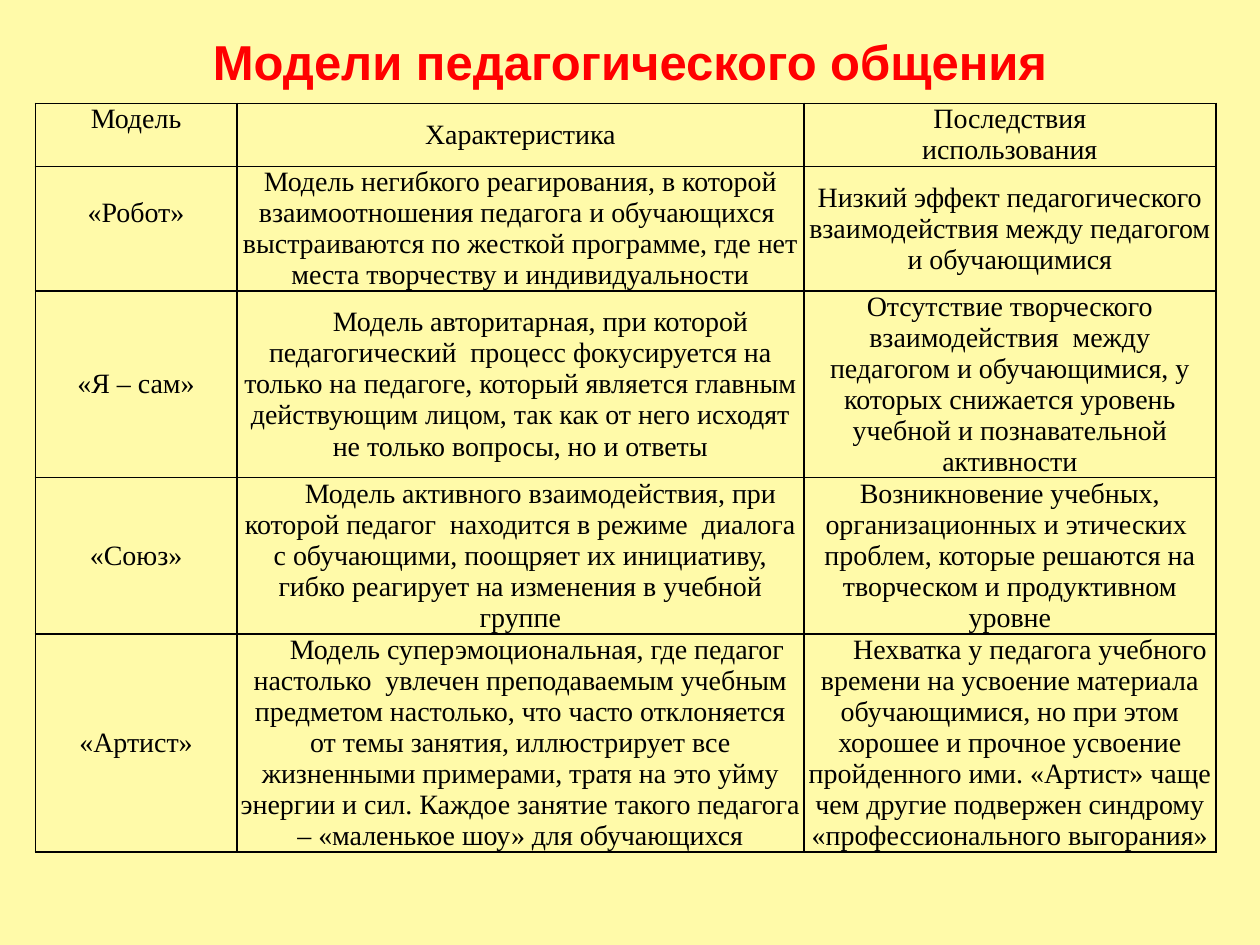
from lxml import etree
from pptx import Presentation
from pptx.dml.color import RGBColor
from pptx.enum.text import MSO_ANCHOR, PP_ALIGN
from pptx.oxml.ns import qn
from pptx.util import Inches, Pt

CENTER = PP_ALIGN.CENTER
MIDDLE = MSO_ANCHOR.MIDDLE

CREAM = RGBColor(0xFF, 0xFA, 0xA9)
RED = RGBColor(0xFF, 0x00, 0x00)
BLACK = RGBColor(0x00, 0x00, 0x00)

COLUMN_WIDTHS = [1.6, 4.5, 3.27]
ROW_HEIGHTS = [0.5, 0.99, 1.48, 1.24, 1.73]
LINE_HEIGHT = Inches(0.25)
FIRST_LINE_INDENT = Inches(0.32)

MODELS = [
    ["Модель", "Характеристика", "Последствия\nиспользования"],
    ["«Робот»",
     "Модель негибкого реагирования, в которой взаимоотношения педагога и "
     "обучающихся  выстраиваются по жесткой программе, где нет места "
     "творчеству и индивидуальности",
     "Низкий эффект педагогического взаимодействия между педагогом и "
     "обучающимися"],
    ["«Я – сам»",
     "Модель авторитарная, при которой педагогический  процесс фокусируется "
     "на только на педагоге, который является главным действующим лицом, так "
     "как от него исходят не только вопросы, но и ответы",
     "Отсутствие творческого взаимодействия  между педагогом и обучающимися, "
     "у которых снижается уровень учебной и познавательной активности"],
    ["«Союз»",
     "Модель активного взаимодействия, при которой педагог  находится в "
     "режиме  диалога с обучающими, поощряет их инициативу, гибко реагирует "
     "на изменения в учебной группе",
     "Возникновение учебных, организационных и этических  проблем, которые "
     "решаются на творческом и продуктивном уровне"],
    ["«Артист»",
     "Модель суперэмоциональная, где педагог  настолько  увлечен "
     "преподаваемым учебным предметом настолько, что часто отклоняется от "
     "темы занятия, иллюстрирует все жизненными примерами, тратя на это уйму "
     "энергии и сил. Каждое занятие такого педагога – «маленькое шоу» для "
     "обучающихся",
     "Нехватка у педагога учебного времени на усвоение материала "
     "обучающимися, но при этом хорошее и прочное усвоение пройденного ими. "
     "«Артист» чаще чем другие подвержен синдрому «профессионального "
     "выгорания»"],
]
# (row, column) positions
RAISED_CELLS = {(0, 0), (1, 0)}
INDENTED_CELLS = {(2, 1), (3, 1), (4, 1), (4, 2)}


def style_paragraph(p, font_name, size, color, bold=False):
    p.alignment = CENTER
    p.font.name = font_name
    p.font.size = Pt(size)
    p.font.color.rgb = color
    p.font.bold = bold


def add_title(s, text):
    title = s.shapes.title
    title.left, title.top = Inches(0.5), Inches(0.13)
    title.width, title.height = Inches(9), Inches(0.71)
    tf = title.text_frame
    tf.text = text
    tf.vertical_anchor = MIDDLE
    style_paragraph(tf.paragraphs[0], "Arial", 28, RED, bold=True)


def set_borders(cell, color, width):
    tc_pr = cell._tc.get_or_add_tcPr()
    for side in ("a:lnL", "a:lnR", "a:lnT", "a:lnB"):
        line = etree.SubElement(tc_pr, qn(side), w=str(Pt(width)))
        fill = etree.SubElement(line, qn("a:solidFill"))
        etree.SubElement(fill, qn("a:srgbClr"), val=str(color))


def fill_cell(cell, text, raised, indented):
    """Write a cell; a raised one keeps a line of space under its text."""
    cell.text = text
    cell.vertical_anchor = MIDDLE
    cell.margin_left = cell.margin_right = Inches(0.03)
    cell.margin_top = 0
    cell.margin_bottom = LINE_HEIGHT if raised else 0
    set_borders(cell, BLACK, 1)
    cell.fill.background()
    for p in cell.text_frame.paragraphs:
        style_paragraph(p, "Times New Roman", 16, BLACK)
        if indented:
            p._p.get_or_add_pPr().set("indent", str(FIRST_LINE_INDENT))


def add_models_table(s):
    table = s.shapes.add_table(
        len(ROW_HEIGHTS), len(COLUMN_WIDTHS), Inches(0.28), Inches(0.82),
        Inches(sum(COLUMN_WIDTHS)), Inches(sum(ROW_HEIGHTS))).table
    table.first_row = table.horz_banding = False
    for column, width in zip(table.columns, COLUMN_WIDTHS):
        column.width = Inches(width)
    for row, height in zip(table.rows, ROW_HEIGHTS):
        row.height = Inches(height)
    for r, texts in enumerate(MODELS):
        for c, text in enumerate(texts):
            fill_cell(table.cell(r, c), text,
                      (r, c) in RAISED_CELLS, (r, c) in INDENTED_CELLS)


def main():
    prs = Presentation()
    prs.slide_width, prs.slide_height = Inches(10), Inches(7.5)
    s = prs.slides.add_slide(prs.slide_layouts[5])
    s.background.fill.solid()
    s.background.fill.fore_color.rgb = CREAM
    add_title(s, "Модели педагогического общения")
    add_models_table(s)
    prs.save("out.pptx")


if __name__ == "__main__":
    main()
